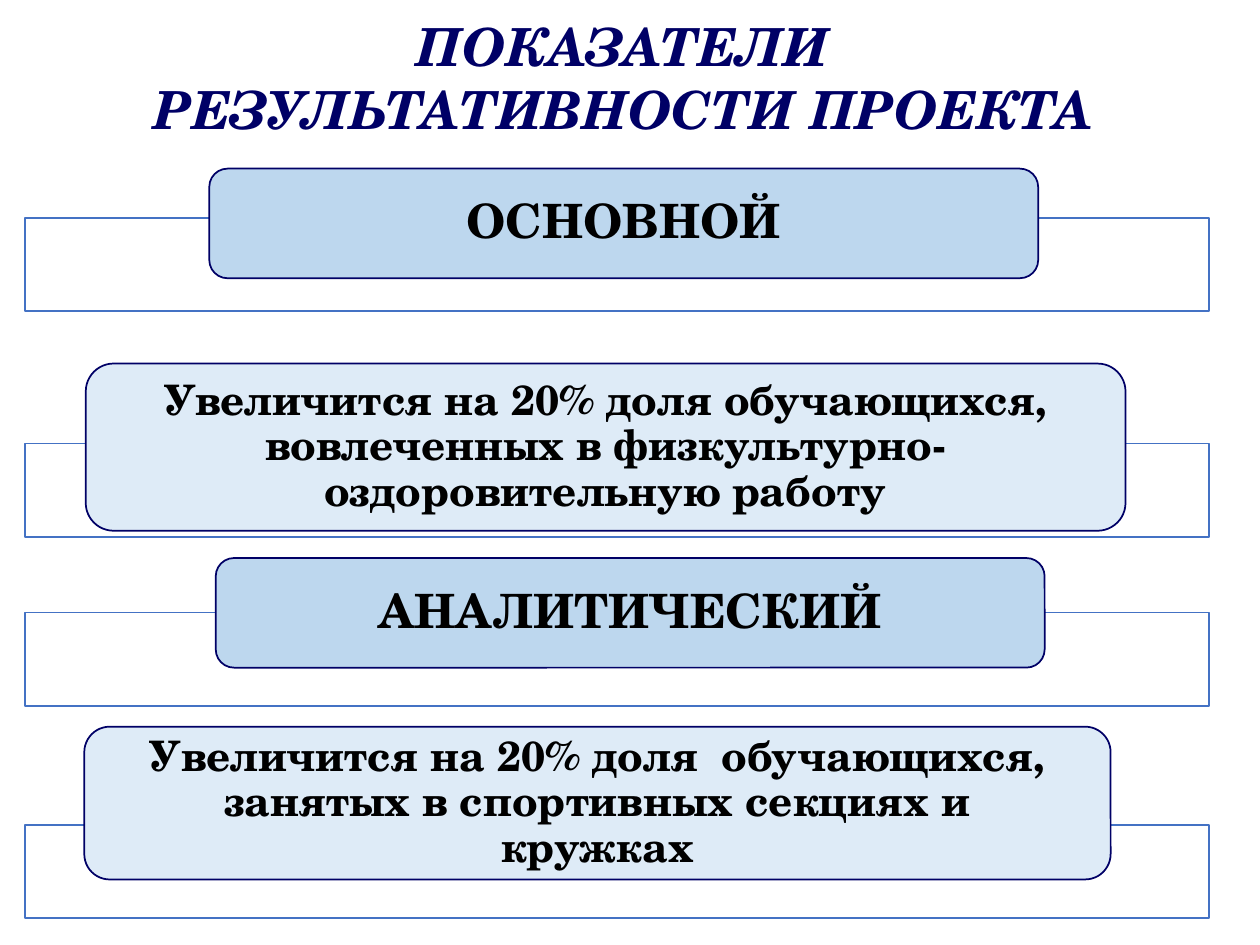
from dataclasses import dataclass

from lxml.etree import SubElement
from pptx import Presentation
from pptx.dml.color import RGBColor
from pptx.enum.shapes import MSO_SHAPE as Preset
from pptx.enum.text import MSO_ANCHOR as Anchor, MSO_AUTO_SIZE as AutoSize, PP_ALIGN as Align
from pptx.oxml.ns import qn
from pptx.util import Cm, Pt

# Content: kind, text, bar top, then box left, top, width, height (cm)
TITLE = "ПОКАЗАТЕЛИ РЕЗУЛЬТАТИВНОСТИ ПРОЕКТА"
INDICATORS = [
    ("heading", "ОСНОВНОЙ", 4.39, (4.22, 3.4, 16.71, 2.21)),
    ("result", "Увеличится на 20% доля обучающихся, вовлеченных в "
     "физкультурно-оздоровительную работу", 8.94, (1.73, 7.33, 20.96, 3.37)),
    ("heading", "АНАЛИТИЧЕСКИЙ", 12.35, (4.35, 11.25, 16.71, 2.21)),
    ("result", "Увеличится на 20% доля  обучающихся, занятых в спортивных "
     "секциях и кружках", 16.63, (1.7, 14.65, 20.69, 3.08)),
]
TITLE_BOX = (2.44, 0.15, 20.24, 2.82)
BAR_LEFT, BAR_WIDTH, BAR_HEIGHT = 0.51, 23.87, 1.88


@dataclass(frozen=True)
class Theme:
    font: str = "TeX Gyre Schola"
    navy: str = "000066"
    black: str = "000000"
    white: str = "FFFFFF"
    bar_line: str = "4472C4"
    title_size: int = 30
    line_width: int = 1
    bar_opacity: int = 90


THEME = Theme()
BOX_STYLES = {  # fill, type size
    "heading": ("BDD7EE", 27),
    "result": ("DEEBF7", 24),
}


def set_text(shape, text, size, color, italic=False):
    frame = shape.text_frame
    frame.word_wrap = True
    frame.text = text
    paragraph = frame.paragraphs[0]
    paragraph.alignment = Align.CENTER
    font = paragraph.font
    font.name, font.size = THEME.font, Pt(size)
    font.bold, font.italic = True, italic
    font.color.rgb = RGBColor.from_string(color)
    return frame, paragraph


def add_panel(slide, preset, box, fill, line):
    shape = slide.shapes.add_shape(preset, *map(Cm, box))
    shape.shadow.inherit = False
    shape.fill.solid()
    shape.fill.fore_color.rgb = RGBColor.from_string(fill)
    shape.line.color.rgb = RGBColor.from_string(line)
    shape.line.width = Pt(THEME.line_width)
    return shape


def add_bar(slide, top):
    box = (BAR_LEFT, top, BAR_WIDTH, BAR_HEIGHT)
    bar = add_panel(slide, Preset.RECTANGLE, box, THEME.white, THEME.bar_line)
    color = bar.fill._xPr.find(qn("a:solidFill"))[0]
    SubElement(color, qn("a:alpha")).set("val", str(THEME.bar_opacity * 1000))


def add_box(slide, kind, text, box):
    fill, size = BOX_STYLES[kind]
    shape = add_panel(slide, Preset.ROUNDED_RECTANGLE, box, fill, THEME.navy)
    frame, paragraph = set_text(shape, text, size, THEME.black)
    frame.vertical_anchor = Anchor.MIDDLE
    frame.margin_left = frame.margin_right = Cm(0.64)
    frame.margin_top = frame.margin_bottom = 0
    paragraph.line_spacing = 0.9


def add_title(slide):
    title = slide.shapes.title
    title.left, title.top, title.width, title.height = map(Cm, TITLE_BOX)
    frame, paragraph = set_text(title, TITLE, THEME.title_size, THEME.navy, italic=True)
    frame.vertical_anchor = Anchor.TOP
    frame.auto_size = AutoSize.SHAPE_TO_FIT_TEXT


def main():
    presentation = Presentation()
    presentation.slide_width, presentation.slide_height = Cm(25.4), Cm(19.05)
    slide = presentation.slides.add_slide(presentation.slide_layouts[5])
    add_title(slide)
    # Each indicator box sits on its own wide bar
    for kind, text, bar_top, box in INDICATORS:
        add_bar(slide, bar_top)
        add_box(slide, kind, text, box)
    presentation.save("out.pptx")


if __name__ == "__main__":
    main()
